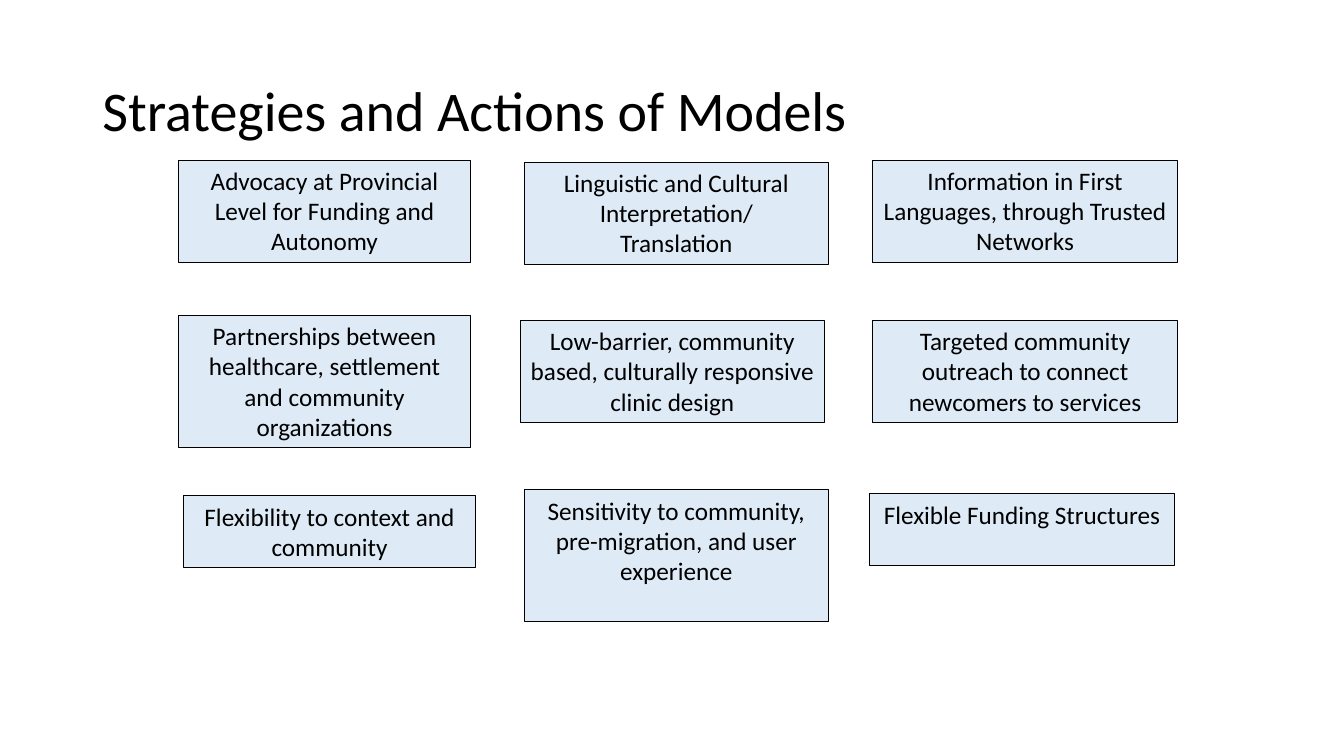
from dataclasses import dataclass

import pptx
import pptx.dml.color
import pptx.enum.shapes
import pptx.enum.text
import pptx.util

Pt = pptx.util.Pt
RGBColor = pptx.dml.color.RGBColor
Align = pptx.enum.text.PP_ALIGN
Anchor = pptx.enum.text.MSO_ANCHOR

BLACK = RGBColor(0x00, 0x00, 0x00)
PALE_BLUE = RGBColor(0xDE, 0xEB, 0xF7)
FONT = "Calibri"
LINE_HEIGHT = 21.6
BOX_PADDING = 7.92
NARROW = 208.8
WIDE = 217.44


@dataclass(frozen=True)
class Strategy:
    text: str
    left: float
    top: float
    width: float
    lines: int

    @property
    def height(self) -> float:
        return self.lines * LINE_HEIGHT + BOX_PADDING


STRATEGIES = [
    Strategy("Advocacy at Provincial Level for Funding and Autonomy",
             127.44, 114.48, NARROW, 3),
    Strategy("Partnerships between healthcare, settlement and community organizations",
             127.44, 225.36, NARROW, 4),
    Strategy("Flexibility to context and community",
             131.04, 354.24, NARROW, 2),
    Strategy("Linguistic and Cultural Interpretation/\nTranslation",
             374.4, 115.92, WIDE, 3),
    Strategy("Low-barrier, community based, culturally responsive clinic design",
             371.52, 228.96, WIDE, 3),
    Strategy("Sensitivity to community, pre-migration, and user experience",
             374.4, 349.92, WIDE, 4),
    Strategy("Information in First Languages, through Trusted Networks",
             623.52, 114.48, WIDE, 3),
    Strategy("Targeted community outreach to connect newcomers to services",
             623.52, 228.96, WIDE, 3),
    Strategy("Flexible Funding Structures",
             621.36, 352.8, WIDE, 2),
]


def format_text(tf: pptx.text.text.TextFrame, size: float, align: Align, anchor: Anchor) -> None:
    tf.word_wrap = True
    tf.auto_size = pptx.enum.text.MSO_AUTO_SIZE.NONE
    tf.vertical_anchor = anchor
    for p in tf.paragraphs:
        p.alignment = align
        for r in p.runs:
            r.font.name = FONT
            r.font.size = Pt(size)
            r.font.color.rgb = BLACK


def add_title(slide: pptx.slide.Slide, text: str) -> None:
    sp = slide.shapes.title
    sp.left, sp.top, sp.width, sp.height = Pt(66), Pt(28.75), Pt(828), Pt(104.4)
    sp.text_frame.text = text
    format_text(sp.text_frame, 40, Align.LEFT, Anchor.MIDDLE)
    sp.text_frame.paragraphs[0].line_spacing = 0.9


def add_strategy(slide: pptx.slide.Slide, strategy: Strategy) -> None:
    sp = slide.shapes.add_shape(
        pptx.enum.shapes.MSO_SHAPE.RECTANGLE,
        Pt(strategy.left), Pt(strategy.top), Pt(strategy.width), Pt(strategy.height))
    sp.shadow.inherit = False
    sp.fill.solid()
    sp.fill.fore_color.rgb = PALE_BLUE
    sp.line.color.rgb = BLACK
    sp.line.width = Pt(0.75)
    sp.text_frame.text = strategy.text
    format_text(sp.text_frame, 18, Align.CENTER, Anchor.TOP)


def main() -> None:
    prs = pptx.Presentation()
    prs.slide_width, prs.slide_height = Pt(960), Pt(540)
    slide = prs.slides.add_slide(prs.slide_layouts[5])
    add_title(slide, "Strategies and Actions of Models")
    for strategy in STRATEGIES:
        add_strategy(slide, strategy)
    prs.save("out.pptx")


if __name__ == "__main__":
    main()
